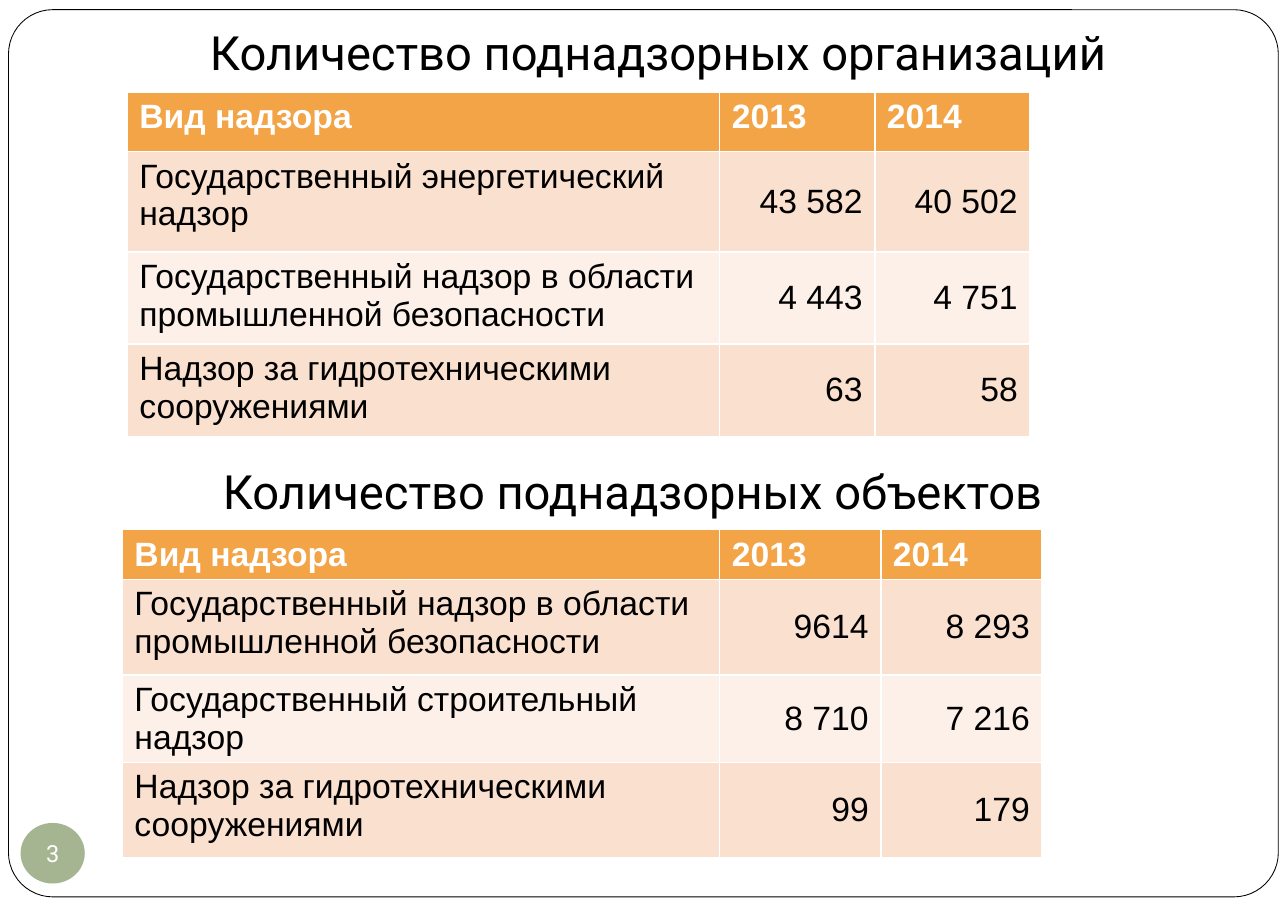
import pptx
import pptx.util
from pptx.dml.color import RGBColor
from pptx.enum.shapes import MSO_SHAPE
from pptx.enum.text import MSO_ANCHOR, MSO_AUTO_SIZE, PP_ALIGN

PX = 9144  # 100 px to the inch

BLACK = RGBColor(0x00, 0x00, 0x00)
WHITE = RGBColor(0xFF, 0xFF, 0xFF)
ORANGE = RGBColor(0xF3, 0xA4, 0x47)
PEACH = RGBColor(0xFA, 0xE0, 0xCF)
PALE_PEACH = RGBColor(0xFD, 0xF0, 0xE9)
SAGE = RGBColor(0xA5, 0xB5, 0x92)

HEADER = ("Вид надзора", "2013", "2014")
ORGANIZATIONS = (
    HEADER,
    ("Государственный энергетический надзор", "43 582", "40 502"),
    ("Государственный надзор в области промышленной безопасности", "4 443", "4 751"),
    ("Надзор за гидротехническими сооружениями", "63", "58"),
)
FACILITIES = (
    HEADER,
    ("Государственный надзор в области промышленной безопасности", "9614", "8 293"),
    ("Государственный строительный надзор", "8 710", "7 216"),
    ("Надзор за гидротехническими сооружениями", "99", "179"),
)


def set_text(frame, text, size, font, color, align, bold=False):
    frame.text = text
    paragraph = frame.paragraphs[0]
    paragraph.alignment = align
    run_font = paragraph.runs[0].font
    run_font.size = pptx.util.Pt(size)
    run_font.name = font
    run_font.bold = bold
    run_font.color.rgb = color


def box(*lengths):
    """Turn px lengths into EMU."""
    return [length * PX for length in lengths]


presentation = pptx.Presentation()
presentation.slide_width, presentation.slide_height = box(1063, 750)
slide = presentation.slides.add_slide(presentation.slide_layouts[5])
shapes = slide.shapes

border = shapes.add_shape(MSO_SHAPE.ROUNDED_RECTANGLE, *box(7, 8, 1048, 732))
border.adjustments[0] = 0.05
border.shadow.inherit = False
border.fill.solid()
border.fill.fore_color.rgb = WHITE
border.line.color.rgb = BLACK
border.line.width = pptx.util.Pt(0.5)
shapes.title.element.addprevious(border.element)

# Headings
organizations_heading = shapes.title
facilities_heading = shapes.add_textbox(*box(70, 391, 904, 47))
for heading, text, left, top in (
    (organizations_heading, "Количество поднадзорных организаций", 91, 29),
    (facilities_heading, "Количество поднадзорных объектов", 70, 391),
):
    heading.left, heading.top, heading.width, heading.height = box(left, top, 904, 47)
    frame = heading.text_frame
    frame.word_wrap = True
    frame.auto_size = MSO_AUTO_SIZE.NONE
    frame.vertical_anchor = MSO_ANCHOR.BOTTOM
    frame.margin_left, frame.margin_top, frame.margin_right, frame.margin_bottom = box(10, 5, 10, 10)
    set_text(frame, text, 28, "Roboto", BLACK, PP_ALIGN.CENTER)

# Tables; the default table style draws the white cell borders
for records, left, top, widths, heights in (
    (ORGANIZATIONS, 105, 76, (489, 128, 128), (49, 83, 76, 76)),
    (FACILITIES, 101, 437, (493, 133, 133), (40, 79, 72, 79)),
):
    table = shapes.add_table(
        len(heights), len(widths), *box(left, top, sum(widths), sum(heights))
    ).table
    for column, width in zip(table.columns, widths):
        column.width = width * PX
    for row_index, (record, height) in enumerate(zip(records, heights)):
        table.rows[row_index].height = height * PX
        is_header = row_index == 0
        band = ORANGE if is_header else PEACH if row_index % 2 else PALE_PEACH
        for column_index, text in enumerate(record):
            cell = table.cell(row_index, column_index)
            cell.fill.solid()
            cell.fill.fore_color.rgb = band
            is_value = column_index > 0 and not is_header
            cell.vertical_anchor = MSO_ANCHOR.MIDDLE if is_value else MSO_ANCHOR.TOP
            set_text(
                cell.text_frame, text, 20, "Arial",
                WHITE if is_header else BLACK,
                PP_ALIGN.RIGHT if is_value else PP_ALIGN.LEFT,
                bold=is_header,
            )

# Slide number
page_badge = shapes.add_shape(MSO_SHAPE.OVAL, *box(17, 679, 53, 50))
page_badge.shadow.inherit = False
page_badge.fill.solid()
page_badge.fill.fore_color.rgb = SAGE
page_badge.line.fill.background()
frame = page_badge.text_frame
frame.word_wrap = False
frame.vertical_anchor = MSO_ANCHOR.MIDDLE
frame.margin_left = frame.margin_top = frame.margin_right = frame.margin_bottom = 0
set_text(frame, "3", 14, "Roboto", WHITE, PP_ALIGN.CENTER)

presentation.save("out.pptx")
